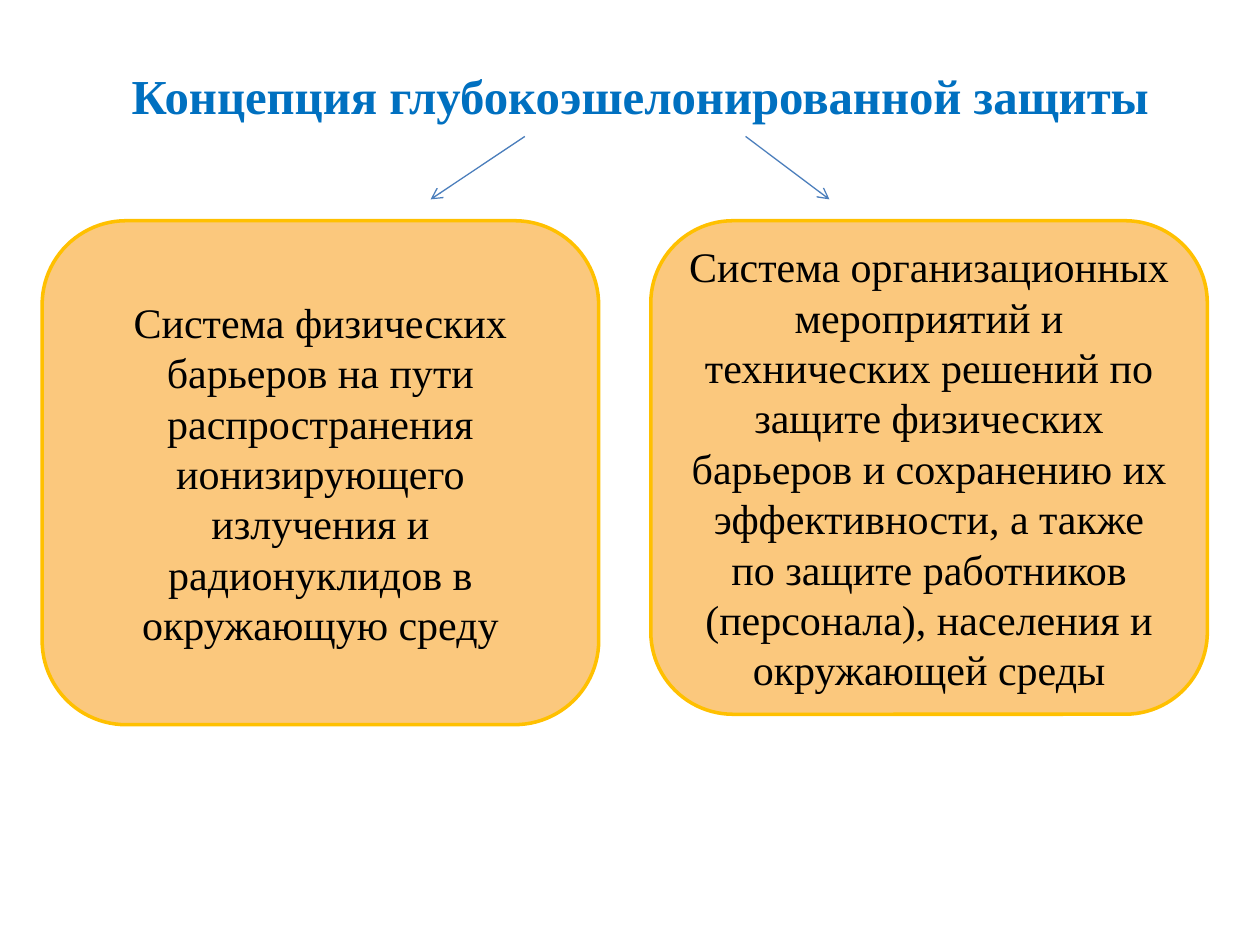
from dataclasses import dataclass

from lxml import etree
from pptx import Presentation
from pptx.dml.color import RGBColor
from pptx.enum import shapes, text
from pptx.oxml import ns
from pptx.util import Cm, Pt


@dataclass(frozen=True)
class Theme:
    """Colours, font and type sizes of the slide."""
    font: str = "Times New Roman"
    title: str = "0070C0"
    body: str = "000000"
    fill: str = "FBC87D"
    border: str = "FFC000"
    arrow: str = "4B7EBC"
    title_size: float = 27.9
    body_size: float = 24
    border_width: float = 2
    arrow_width: float = 0.75


THEME = Theme()


def write(frame, words, *, size, color, bold=False, anchor=text.MSO_ANCHOR.MIDDLE):
    """Put one centred, wrapped paragraph into a text frame."""
    frame.word_wrap = True
    frame.vertical_anchor = anchor
    para = frame.paragraphs[0]
    para.alignment = text.PP_ALIGN.CENTER
    span = para.add_run()
    span.text = words
    span.font.name = THEME.font
    span.font.size = Pt(size)
    span.font.bold = bold
    span.font.color.rgb = RGBColor.from_string(color)


def add_title(page, words):
    """Add the heading at the top of the page."""
    box = page.shapes.add_textbox(Cm(1.48), Cm(1.06), Cm(22.86), Cm(3.18))
    box.text_frame.margin_top = Cm(0.27)
    write(box.text_frame, words, size=THEME.title_size, color=THEME.title,
          bold=True, anchor=text.MSO_ANCHOR.TOP)


def add_card(page, left, height, words):
    """Add a rounded card with centred text."""
    card = page.shapes.add_shape(shapes.MSO_SHAPE.ROUNDED_RECTANGLE,
                                 Cm(left), Cm(4.45), Cm(11.22), Cm(height))
    card.shadow.inherit = False
    card.fill.solid()
    card.fill.fore_color.rgb = RGBColor.from_string(THEME.fill)
    card.line.color.rgb = RGBColor.from_string(THEME.border)
    card.line.width = Pt(THEME.border_width)
    write(card.text_frame, words, size=THEME.body_size, color=THEME.body)


def add_arrow(page, start, end):
    """Add a slanted arrow leading from the title towards a card."""
    arrow = page.shapes.add_connector(shapes.MSO_CONNECTOR.STRAIGHT,
                                      Cm(start), Cm(2.75), Cm(end), Cm(4.02))
    arrow.line.color.rgb = RGBColor.from_string(THEME.arrow)
    arrow.line.width = Pt(THEME.arrow_width)
    etree.SubElement(arrow.line._get_or_add_ln(), ns.qn("a:tailEnd"), type="arrow")
    etree.SubElement(arrow._element.spPr, ns.qn("a:effectLst"))


def main():
    """Build the slide and save it."""
    deck = Presentation()
    deck.slide_width, deck.slide_height = Cm(25.4), Cm(19.05)
    page = deck.slides.add_slide(deck.slide_layouts[6])
    add_title(page, "Концепция глубокоэшелонированной защиты")
    add_card(page, 0.85, 10.16,
             "Система физических барьеров на пути распространения "
             "ионизирующего излучения и радионуклидов в окружающую среду")
    add_card(page, 13.12, 9.95,
             "Система организационных мероприятий и технических решений по "
             "защите физических барьеров и сохранению их эффективности, а также "
             "по защите работников (персонала), населения и окружающей среды")
    for start, end in ((10.58, 8.68), (15.03, 16.72)):
        add_arrow(page, start, end)
    deck.save("out.pptx")


if __name__ == "__main__":
    main()
